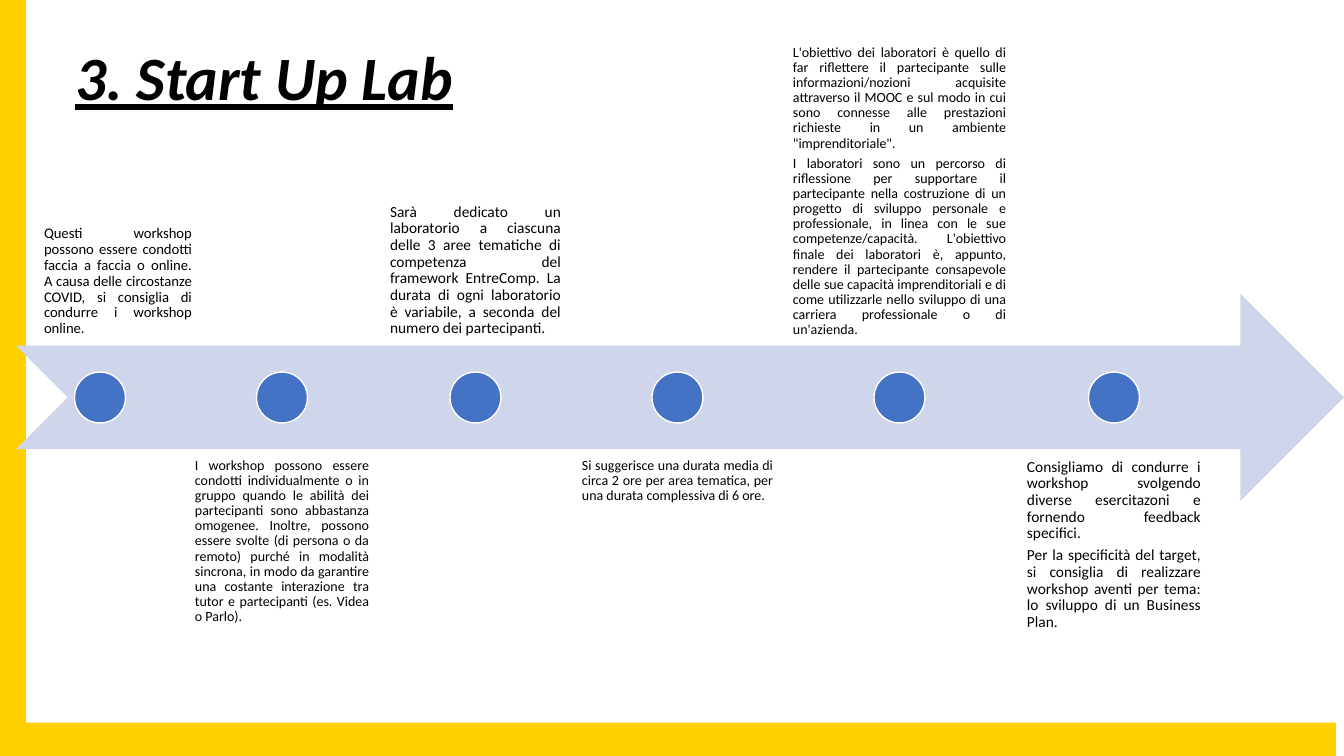
import pptx
import pptx.util
import pptx.dml.color
import pptx.enum.shapes
import pptx.enum.text
from dataclasses import dataclass

SHAPE = pptx.enum.shapes.MSO_SHAPE
ALIGN = pptx.enum.text.PP_ALIGN
ANCHOR = pptx.enum.text.MSO_ANCHOR
EMU_PER_PX = 914400 / 100.8


@dataclass(frozen=True)
class Theme:
    font: str = "Calibri"
    ink: str = "000000"
    frame: str = "FFCF00"
    arrow: str = "CFD5EA"
    marker: str = "4472C4"
    outline: str = "FFFFFF"
    title_size: float = 44
    small: float = 10
    medium: float = 10.5
    large: float = 11


def px(length):
    return pptx.util.Emu(round(length * EMU_PER_PX))


def rgb(value):
    return pptx.dml.color.RGBColor.from_string(value)


def write_text(frame, paragraphs, *, font, size, color, align=ALIGN.LEFT,
               after=0, bold=False, italic=False, underline=False):
    for index, words in enumerate(paragraphs):
        paragraph = frame.paragraphs[0] if index == 0 else frame.add_paragraph()
        paragraph.alignment = align
        paragraph.line_spacing = 0.9
        paragraph.space_before = pptx.util.Pt(0)
        paragraph.space_after = pptx.util.Pt(after)
        run = paragraph.add_run()
        run.text = words
        run.font.name = font
        run.font.size = pptx.util.Pt(size)
        run.font.color.rgb = rgb(color)
        run.font.bold = bold
        run.font.italic = italic
        run.font.underline = underline


class SlideBuilder:
    def __init__(self, slide, theme):
        self.slide = slide
        self.theme = theme

    def shape(self, preset, left, top, width, height, fill, outline=None, adjust=()):
        shape = self.slide.shapes.add_shape(
            preset, px(left), px(top), px(width), px(height))
        shape.shadow.inherit = False
        shape.fill.solid()
        shape.fill.fore_color.rgb = rgb(fill)
        if outline:
            shape.line.color.rgb = rgb(outline)
            shape.line.width = pptx.util.Pt(1)
        else:
            shape.line.fill.background()
        for index, value in enumerate(adjust):
            shape.adjustments[index] = value

    def text(self, left, top, width, height, paragraphs, anchor, inset_x, inset_y,
             **text_format):
        box = self.slide.shapes.add_textbox(
            px(left), px(top), px(width), px(height))
        frame = box.text_frame
        frame.word_wrap = True
        frame.vertical_anchor = anchor
        frame.margin_left = frame.margin_right = px(inset_x)
        frame.margin_top = frame.margin_bottom = px(inset_y)
        write_text(frame, paragraphs, font=self.theme.font, color=self.theme.ink,
                   **text_format)


# Timeline stages: column width, type size, text shift, paragraphs
STAGES = [
    (166, Theme.medium, 18, [
        "Questi workshop possono essere condotti faccia a faccia o online. A causa "
        "delle circostanze COVID, si consiglia di condurre i workshop online."]),
    (190, Theme.small, 0, [
        "I workshop possono essere condotti individualmente o in gruppo quando le "
        "abilità dei partecipanti sono abbastanza omogenee. Inoltre, possono essere "
        "svolte (di persona o da remoto) purché in modalità sincrona, in modo da "
        "garantire una costante interazione tra tutor e partecipanti (es. Videa o "
        "Parlo)."]),
    (189, Theme.large, 0, [
        "Sarà dedicato un laboratorio a ciascuna delle 3 aree tematiche di competenza "
        "del framework EntreComp. La durata di ogni laboratorio è variabile, a "
        "seconda del numero dei partecipanti."]),
    (207, Theme.small, 0, [
        "Si suggerisce una durata media di circa 2 ore per area tematica, per una "
        "durata complessiva di 6 ore."]),
    (229, Theme.small, 0, [
        "L'obiettivo dei laboratori è quello di far riflettere il partecipante sulle "
        "informazioni/nozioni acquisite attraverso il MOOC e sul modo in cui sono "
        "connesse alle prestazioni richieste in un ambiente \"imprenditoriale\".",
        "I laboratori sono un percorso di riflessione per supportare il partecipante "
        "nella costruzione di un progetto di sviluppo personale e professionale, in "
        "linea con le sue competenze/capacità. L'obiettivo finale dei laboratori è, "
        "appunto, rendere il partecipante consapevole delle sue capacità "
        "imprenditoriali e di come utilizzarle nello sviluppo di una carriera "
        "professionale o di un'azienda."]),
    (192, Theme.large, 0, [
        "Consigliamo di condurre i workshop svolgendo diverse esercitazoni e fornendo "
        "feedback specifici.",
        "Per la specificità del target, si consiglia di realizzare workshop aventi "
        "per tema: lo sviluppo di un Business Plan."]),
]


def main():
    presentation = pptx.Presentation()
    presentation.slide_width, presentation.slide_height = px(1344), px(756)
    theme = Theme()
    builder = SlideBuilder(
        presentation.slides.add_slide(presentation.slide_layouts[6]), theme)

    # Frame and title
    builder.shape(SHAPE.CORNER, -8, 0, 1344, 756, theme.frame, adjust=(0.044, 0.045))
    builder.text(65, 8, 1159, 146, ["3. Start Up Lab"], ANCHOR.MIDDLE, 10, 5,
                 size=theme.title_size, bold=True, italic=True, underline=True)

    # Timeline arrow
    arrow_top, arrow_height = 294, 207
    builder.shape(SHAPE.NOTCHED_RIGHT_ARROW, 16, arrow_top, 1328, arrow_height,
                  theme.arrow)

    # Stages alternate above and below the arrow
    column_left, column_gap, marker_size = 17, 4, 51
    marker_top = arrow_top + (arrow_height - marker_size) / 2
    for index, (width, size, shift, paragraphs) in enumerate(STAGES):
        above = index % 2 == 0
        inset = 8 if size == theme.small else 9
        builder.text(column_left + shift, 139 if above else 450, width, arrow_height,
                     paragraphs, ANCHOR.BOTTOM if above else ANCHOR.TOP, inset, inset,
                     size=size, align=ALIGN.JUSTIFY, after=0.35 * size)
        builder.shape(SHAPE.OVAL, column_left + (width - marker_size) / 2, marker_top,
                      marker_size, marker_size, theme.marker, theme.outline)
        column_left += width + column_gap

    presentation.save("out.pptx")


if __name__ == "__main__":
    main()
